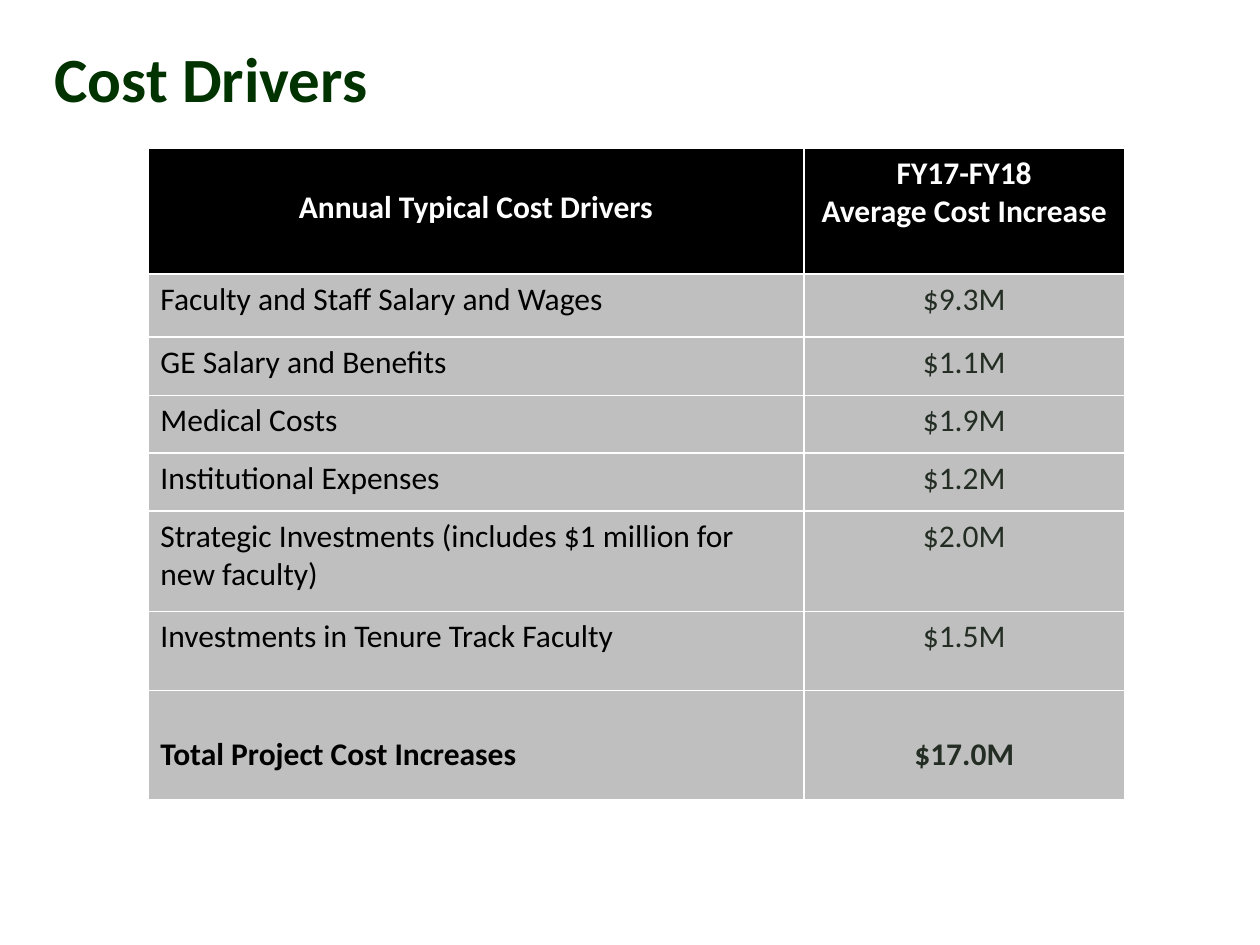
import pptx
import pptx.util
import pptx.dml.color
import pptx.enum.text

Pt = pptx.util.Pt
RGBColor = pptx.dml.color.RGBColor
ALIGN = pptx.enum.text.PP_ALIGN
ANCHOR = pptx.enum.text.MSO_ANCHOR

TITLE = "Cost Drivers"
HEADER = ("Annual Typical Cost Drivers", "FY17-FY18\nAverage Cost Increase")
COSTS = [
    ("Faculty and Staff Salary and Wages", "$9.3M"),
    ("GE Salary and Benefits", "$1.1M"),
    ("Medical Costs", "$1.9M"),
    ("Institutional Expenses", "$1.2M"),
    ("Strategic Investments (includes $1 million for new faculty)", "$2.0M"),
    ("Investments in Tenure Track Faculty", "$1.5M"),
]
TOTAL = ("Total Project Cost Increases", "$17.0M")

COLUMN_WIDTHS = (375, 183)
ROW_HEIGHTS = (72, 36, 33.5, 33, 33, 57.5, 45, 62.5)
TOP_MARGIN = 3.6
HEADER_LABEL_MARGIN = 23
TOTAL_MARGIN = 25.6

FONT = "Calibri"
GREEN = RGBColor(0x00, 0x33, 0x00)
DARK_GREEN = RGBColor(0x23, 0x2D, 0x23)
BLACK = RGBColor(0, 0, 0)
WHITE = RGBColor(255, 255, 255)
GRAY = RGBColor(0xBF, 0xBF, 0xBF)


def format_text(frame, size, color, bold, align):
    for para in frame.paragraphs:
        para.alignment = align
        for span in para.runs:
            span.font.name = FONT
            span.font.size = Pt(size)
            span.font.bold = bold
            span.font.color.rgb = color


def fill_cell(cell, text, fill, color, bold, align, top):
    cell.fill.solid()
    cell.fill.fore_color.rgb = fill
    cell.margin_top = Pt(top)
    cell.text_frame.text = text
    format_text(cell.text_frame, 18, color, bold, align)


def add_title(page):
    title = page.shapes.title
    title.left, title.top, title.width, title.height = Pt(24), Pt(0), Pt(678), Pt(88)
    title.text_frame.text = TITLE
    title.text_frame.vertical_anchor = ANCHOR.MIDDLE
    format_text(title.text_frame, 36, GREEN, True, ALIGN.LEFT)


def add_cost_table(page):
    rows = [HEADER, *COSTS, TOTAL]
    table = page.shapes.add_table(
        len(rows), len(HEADER), Pt(84.5), Pt(84.5),
        Pt(sum(COLUMN_WIDTHS)), Pt(sum(ROW_HEIGHTS))).table
    table.horz_banding = False
    for column, width in zip(table.columns, COLUMN_WIDTHS):
        column.width = Pt(width)
    for row, height in zip(table.rows, ROW_HEIGHTS):
        row.height = Pt(height)

    for column, text in enumerate(HEADER):
        top = TOP_MARGIN if column else HEADER_LABEL_MARGIN
        fill_cell(table.cell(0, column), text, BLACK, WHITE, True, ALIGN.CENTER, top)
    for index, (label, amount) in enumerate(rows[1:], start=1):
        is_total = index == len(rows) - 1
        top = TOTAL_MARGIN if is_total else TOP_MARGIN
        fill_cell(table.cell(index, 0), label, GRAY, BLACK, is_total, ALIGN.LEFT, top)
        fill_cell(table.cell(index, 1), amount, GRAY, DARK_GREEN, is_total, ALIGN.CENTER, top)


def main():
    deck = pptx.Presentation()
    deck.slide_width, deck.slide_height = Pt(720), Pt(540)
    page = deck.slides.add_slide(deck.slide_layouts[5])
    add_title(page)
    add_cost_table(page)
    deck.save("out.pptx")


if __name__ == "__main__":
    main()
